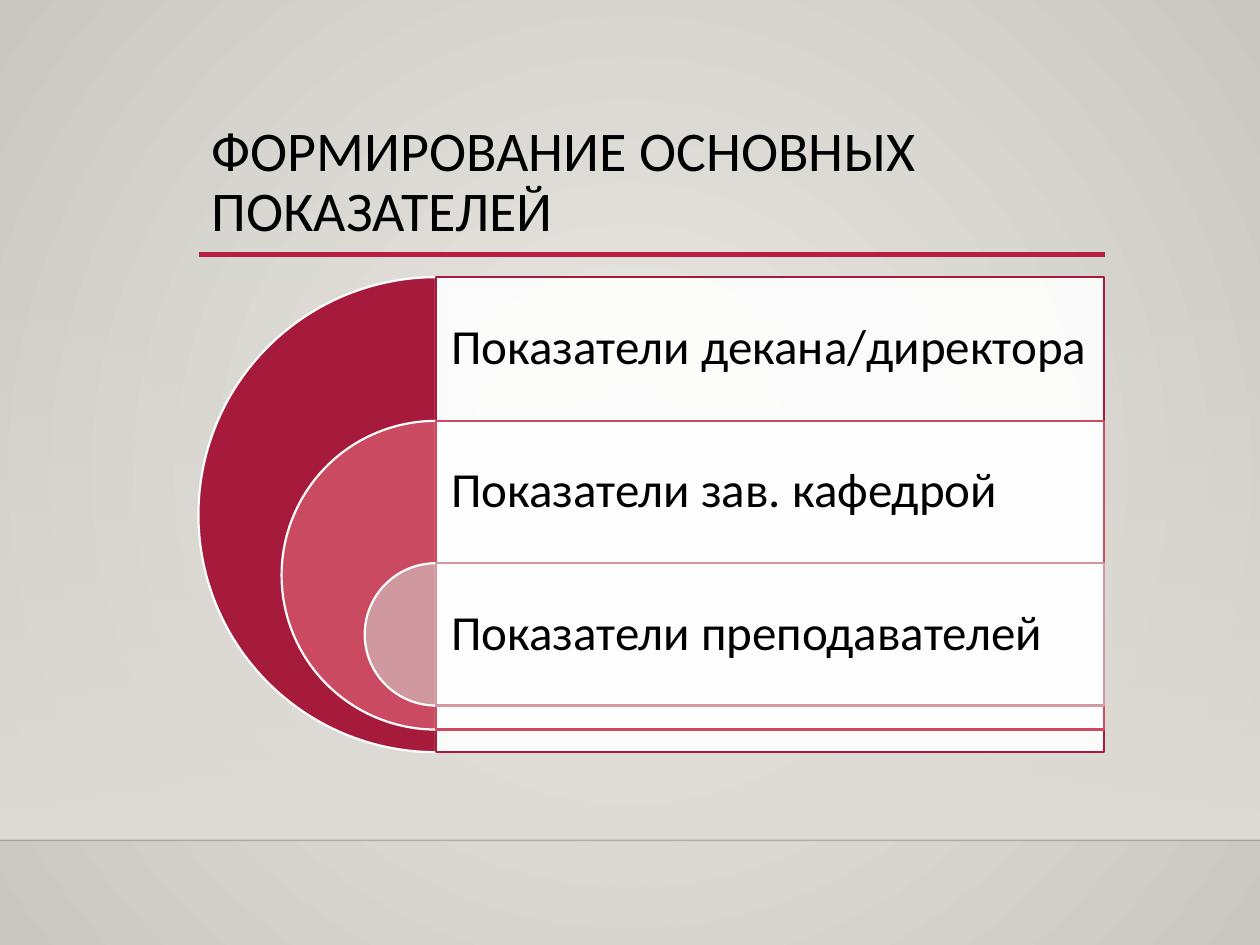
from lxml import etree
from pptx import Presentation
from pptx.dml.color import RGBColor
from pptx.enum.shapes import MSO_CONNECTOR, MSO_SHAPE
from pptx.enum.text import MSO_ANCHOR
from pptx.oxml.ns import qn
from pptx.util import Inches, Pt

PIE, RECTANGLE = MSO_SHAPE.PIE, MSO_SHAPE.RECTANGLE
STRAIGHT, MIDDLE = MSO_CONNECTOR.STRAIGHT, MSO_ANCHOR.MIDDLE
COLORS = {
    "center": "ECEAE7", "edge": "CAC7C1", "floor": "DFDBD5",
    "horizon": "000001", "rule": "B71E42", "text": "000000", "white": "FFFFFF",
    "dean": "A61B3C", "head": "CA4B61", "teacher": "D0999F",
}
RGB = {name: RGBColor.from_string(value) for name, value in COLORS.items()}


def set_alpha(element, percent):
    """Make the first RGB colour inside the element partly transparent."""
    color = next(element.iter(qn("a:srgbClr")))
    etree.SubElement(color, qn("a:alpha"), val=str(percent * 1000))


def add_label(left, top, width, height, text, size, inset):
    box = page.shapes.add_textbox(Inches(left), Inches(top), Inches(width), Inches(height))
    frame = box.text_frame
    frame_format = {"word_wrap": True, "vertical_anchor": MIDDLE}
    for side, margin in zip(("left", "top", "right", "bottom"), inset):
        frame_format[f"margin_{side}"] = Inches(margin)
    for name, value in frame_format.items():
        setattr(frame, name, value)
    para = frame.paragraphs[0]
    para.line_spacing = 0.9
    span = para.add_run()
    span.text = text
    for name, value in {"name": "Calibri", "size": Pt(size)}.items():
        setattr(span.font, name, value)
    span.font.color.rgb = RGB["text"]


deck = Presentation()
deck.slide_width, deck.slide_height = Inches(10), Inches(7.5)
page = deck.slides.add_slide(deck.slide_layouts[6])

# Radial background
backdrop = page.background.fill
backdrop.gradient()
for stop, name in zip(backdrop.gradient_stops, ("center", "edge")):
    stop.color.rgb = RGB[name]
gradient = next(page.element.iter(qn("a:gradFill")))
gradient.remove(gradient.find(qn("a:lin")))
radial = etree.SubElement(gradient, qn("a:path"), path="circle")
etree.SubElement(radial, qn("a:fillToRect"), l="50000", t="50000", r="50000", b="50000")

# Band that fades in downwards
band = page.shapes.add_shape(RECTANGLE, 0, Inches(2.2), Inches(10), Inches(4.46))
band.shadow.inherit = False
band.line.fill.background()
band.fill.gradient()
band.fill.gradient_angle = 270
for stop in band.fill.gradient_stops:
    stop.color.rgb = RGB["floor"]
set_alpha(band.element.spPr, 0)

# Horizon and title rule
for left, right, y, name, weight, alpha in (
    (0, 10, 6.67, "horizon", 1, 20),
    (1.58, 8.77, 2.02, "rule", 2.5, 100),
):
    line = page.shapes.add_connector(STRAIGHT, Inches(left), Inches(y), Inches(right), Inches(y))
    line.line.color.rgb = RGB[name]
    line.line.width = Pt(weight)
    etree.SubElement(line.element.spPr, qn("a:effectLst"))
    if alpha < 100:
        set_alpha(line.element.spPr, alpha)

# Title
add_label(1.58, 0.88, 7.19, 1.15, "ФОРМИРОВАНИЕ ОСНОВНЫХ ПОКАЗАТЕЛЕЙ", 32,
          (0.1, 0.05, 0.1, 0.05))

# Nested half circles, each with its panel and label
AXIS, PANEL_WIDTH, ROW_HEIGHT = 3.46, 5.3, 1.13
for top, diameter, name, text in (
    (2.2, 3.77, "dean", "Показатели декана/директора"),
    (3.34, 2.45, "head", "Показатели зав. кафедрой"),
    (4.47, 1.13, "teacher", "Показатели преподавателей"),
):
    for kind, left, width, fill, outline in (
        (PIE, AXIS - diameter / 2, diameter, name, "white"),
        (RECTANGLE, AXIS, PANEL_WIDTH, "white", name),
    ):
        shape = page.shapes.add_shape(kind, Inches(left), Inches(top),
                                      Inches(width), Inches(diameter))
        shape.shadow.inherit = False
        shape.fill.solid()
        shape.fill.fore_color.rgb = RGB[fill]
        shape.line.color.rgb = RGB[outline]
        shape.line.width = Pt(1.25)
        if kind == PIE:
            shape.adjustments[0], shape.adjustments[1] = 54, 162
        else:
            set_alpha(shape.element.spPr, 90)
    add_label(AXIS, top, PANEL_WIDTH, ROW_HEIGHT, text, 28, (0.12,) * 4)

deck.save("out.pptx")
